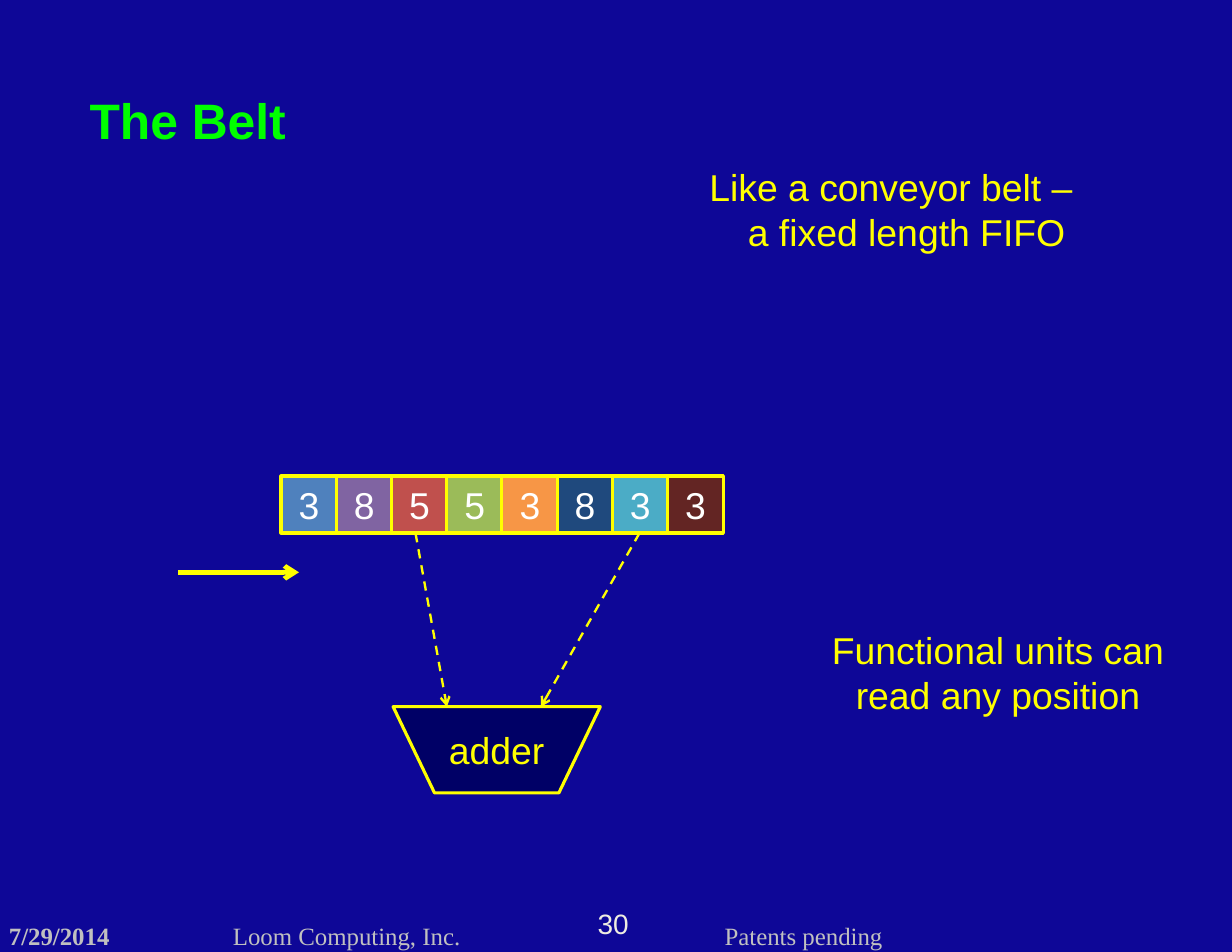
from dataclasses import dataclass

from lxml.etree import SubElement
from pptx import Presentation
from pptx.dml.color import RGBColor
from pptx.enum.dml import MSO_LINE_DASH_STYLE as Dash
from pptx.enum.shapes import MSO_CONNECTOR as Connector, MSO_SHAPE as Shape
from pptx.enum.text import MSO_ANCHOR as Anchor, PP_ALIGN as Align
from pptx.oxml.ns import qn
from pptx.util import Inches, Pt


@dataclass(frozen=True)
class Theme:
    background: str = "0E0797"
    title: str = "00FF00"
    accent: str = "FFFF00"
    cell_text: str = "FFFFFF"
    footer: str = "C0C0C0"
    number: str = "EEECE1"
    unit_fill: str = "000066"
    sans: str = "Arial"
    serif: str = "Times New Roman"
    title_size: int = 32
    body_size: int = 24
    number_size: int = 18
    footer_size: int = 16


THEME = Theme()
BELT = [
    ("3", "4F81BD"), ("8", "8064A2"), ("5", "C0504D"), ("5", "9BBB59"),
    ("3", "F79646"), ("8", "1F497D"), ("3", "4BACC6"), ("3", "632523"),
]


def rgb(value):
    return RGBColor.from_string(value)


def style(para, size, color, name=THEME.sans, bold=False, align=Align.LEFT):
    para.alignment = align
    font = para.font
    font.name, font.size, font.bold = name, Pt(size), bold
    font.color.rgb = rgb(color)


def add_text(page, box, lines, size, color, wrap=False, **options):
    """Place lines of text in a box without insets."""
    frame = page.shapes.add_textbox(*map(Inches, box)).text_frame
    frame.word_wrap = wrap
    frame.margin_left = frame.margin_right = 0
    frame.margin_top = frame.margin_bottom = 0
    frame.text = "\n".join(lines)
    for para in frame.paragraphs:
        style(para, size, color, **options)
    return frame


def add_block(page, kind, box, text, fill, color):
    block = page.shapes.add_shape(kind, *map(Inches, box))
    block.shadow.inherit = False
    block.fill.solid()
    block.fill.fore_color.rgb = rgb(fill)
    block.line.color.rgb = rgb(THEME.accent)
    block.line.width = Pt(2)
    frame = block.text_frame
    frame.vertical_anchor = Anchor.MIDDLE
    frame.text = text
    style(frame.paragraphs[0], THEME.body_size, color, align=Align.CENTER)


def add_arrow(page, start, end, width, dash=None):
    arrow = page.shapes.add_connector(Connector.STRAIGHT, *map(Inches, start + end))
    arrow.line.color.rgb = rgb(THEME.accent)
    arrow.line.width = Pt(width)
    if dash is not None:
        arrow.line.dash_style = dash
    SubElement(arrow.line._get_or_add_ln(), qn("a:tailEnd"), type="arrow")
    SubElement(arrow._element.spPr, qn("a:effectLst"))


def add_belt(page, box):
    """Spread the belt positions evenly, neighbours sharing their border."""
    left, top, width, height = box
    cell_width = 0.5
    pitch = (width - cell_width) / (len(BELT) - 1)
    for index, (value, fill) in enumerate(BELT):
        cell = (left + index * pitch, top, cell_width, height)
        add_block(page, Shape.RECTANGLE, cell, value, fill, THEME.cell_text)


def add_adder(page, box):
    add_block(page, Shape.FLOWCHART_MANUAL_OPERATION, box, "adder",
              THEME.unit_fill, THEME.accent)
    top = box[1]
    for start, end in (((5.71, 4.76), (4.83, top)), ((3.71, 4.76), (3.99, top))):
        add_arrow(page, start, end, 1.5, Dash.DASH)


def add_notes_on_belt(page, fifo_box, units_box):
    look = dict(size=THEME.body_size, color=THEME.accent, wrap=True, align=Align.CENTER)
    fifo = add_text(page, fifo_box, ["Like a conveyor belt –", "a fixed length FIFO"], **look)
    fifo.paragraphs[1]._p.get_or_add_pPr().set("marL", str(Inches(0.28)))
    add_text(page, units_box, ["Functional units can read any position"], **look)


def add_footer(page, top):
    look = dict(size=THEME.footer_size, color=THEME.footer, name=THEME.serif)
    add_text(page, (0.08, top, 1, 0.26), ["7/29/2014"], bold=True, **look)
    add_text(page, (2.08, top, 2.4, 0.26), ["Loom Computing, Inc."], **look)
    add_text(page, (6.47, top, 1.6, 0.26), ["Patents pending"], **look)
    add_text(page, (5.32, 8.09, 0.31, 0.3), ["30"], THEME.number_size,
             THEME.number, align=Align.CENTER)


def main():
    deck = Presentation()
    deck.slide_width, deck.slide_height = Inches(11), Inches(8.5)
    page = deck.slides.add_slide(deck.slide_layouts[6])
    page.background.fill.solid()
    page.background.fill.fore_color.rgb = rgb(THEME.background)

    add_footer(page, 8.22)
    add_text(page, (0.8, 0.8, 1.77, 0.52), ["The Belt"], THEME.title_size,
             THEME.title, bold=True)
    add_notes_on_belt(page, (6.22, 1.47, 3.47, 0.83), (7.35, 5.6, 3.12, 0.83))
    add_belt(page, (2.51, 4.25, 3.95, 0.51))
    add_arrow(page, (1.59, 5.11), (2.67, 5.11), 3)
    add_adder(page, (3.51, 6.31, 1.85, 0.77))
    deck.save("out.pptx")


if __name__ == "__main__":
    main()
